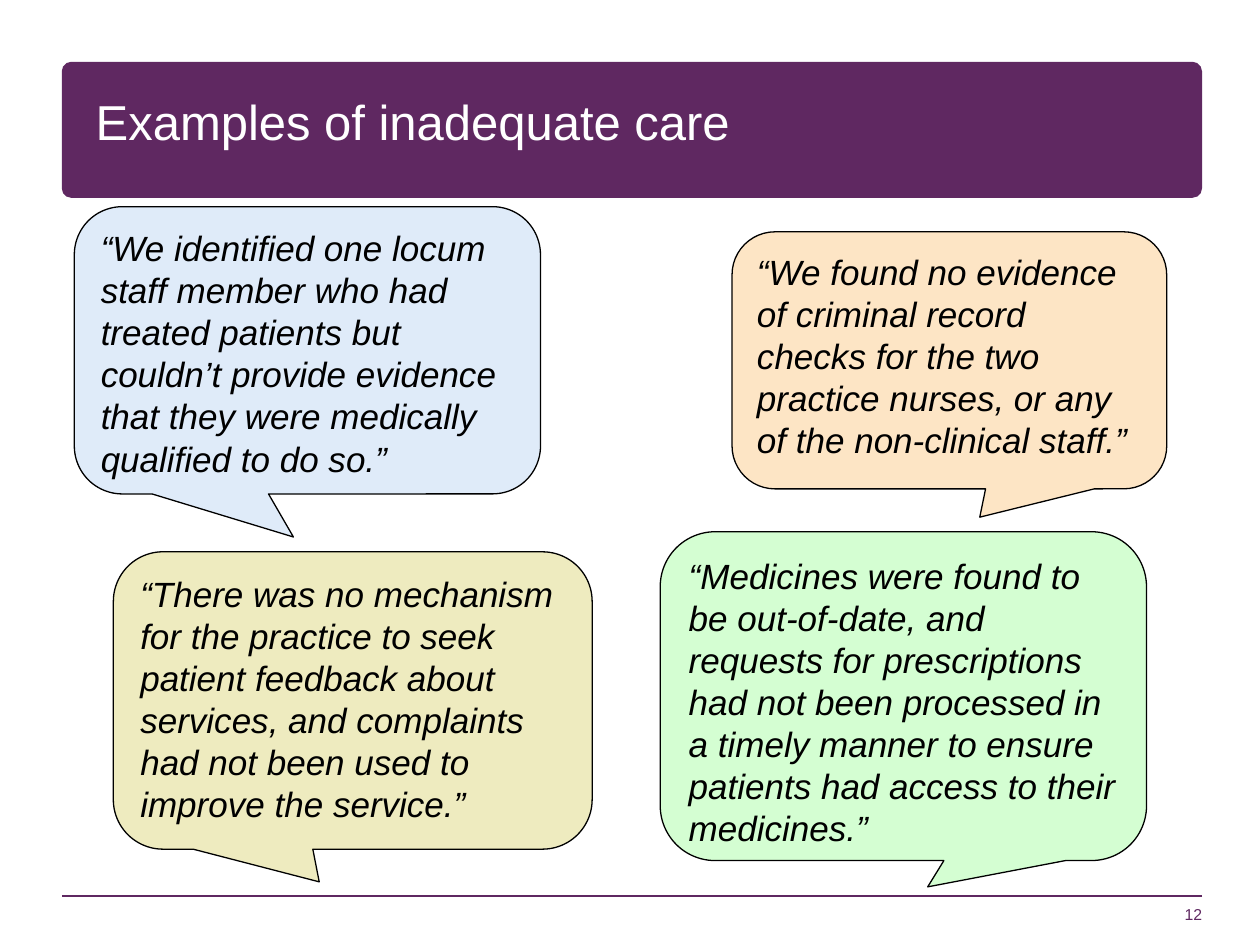
from lxml.etree import SubElement
from pptx import Presentation
from pptx.dml.color import RGBColor
from pptx.enum.shapes import MSO_CONNECTOR, MSO_SHAPE
from pptx.enum.text import MSO_ANCHOR, PP_ALIGN
from pptx.oxml.ns import qn
from pptx.util import Inches, Pt

COLORS = {
    "plum": "5F2861", "white": "FFFFFF", "black": "000000",
    "blue": "DFEBF9", "orange": "FDE5C5", "khaki": "EEEBBF", "green": "D4FED2",
}
FONT = "Arial"
LEFT, RIGHT = 0.49, 9.54  # content margins, inches

# Fill, box (left, top, width, height), tail tip offset as share of box, words
QUOTES = [
    ("khaki", (0.9, 4.38, 3.8, 2.36), (-0.07, 0.61),
     "“There was no mechanism for the practice to seek patient feedback about "
     "services, and complaints had not been used to improve the service.”"),
    ("green", (5.24, 4.22, 3.86, 2.61), (0.05, 0.58),
     "“Medicines were found to be out-of-date, and requests for prescriptions "
     "had not been processed in a timely manner to ensure patients had access "
     "to their medicines.”"),
    ("orange", (5.81, 1.84, 3.45, 2.04), (0.07, 0.61),
     "“We found no evidence of criminal record checks for the two practice "
     "nurses, or any of the non-clinical staff.”"),
    ("blue", (0.59, 1.64, 3.7, 2.28), (-0.03, 0.65),
     "“We identified one locum staff member who had treated patients but "
     "couldn’t provide evidence that they were medically qualified to do so.”"),
]


def rgb(name):
    return RGBColor.from_string(COLORS[name])


def write(sp, text, size, color, italic=False, align=PP_ALIGN.LEFT,
          anchor=MSO_ANCHOR.TOP, inset=None, spacing=None, after=0):
    tf = sp.text_frame
    tf.word_wrap = True
    tf.vertical_anchor = anchor
    if inset is not None:
        tf.margin_left = tf.margin_right = Inches(inset)
        tf.margin_top = tf.margin_bottom = Inches(inset)
    p = tf.paragraphs[0]
    p.alignment = align
    p.space_before, p.space_after = Pt(0), Pt(after)
    if spacing:
        p.line_spacing = spacing
    r = p.add_run()
    r.text = text
    r.font.name, r.font.size, r.font.italic = FONT, Pt(size), italic
    r.font.color.rgb = rgb(color)


def add_box(s, preset, box, fill, line=None):
    sp = s.shapes.add_shape(preset, *map(Inches, box))
    sp.shadow.inherit = False
    sp.fill.solid()
    sp.fill.fore_color.rgb = rgb(fill)
    if line:
        sp.line.color.rgb = rgb(line)
        sp.line.width = Pt(0.75)
    else:
        sp.line.fill.background()
    return sp


def add_header(s, box, text):
    left, top, width, height = box
    banner = add_box(s, MSO_SHAPE.ROUNDED_RECTANGLE, box, "plum")
    banner.adjustments[0] = 0.07
    title = s.shapes.title
    title.left, title.top = Inches(left + 0.27), Inches(top + 0.21)
    title.width, title.height = Inches(7.4), Inches(0.59)
    # Bring the title in front of the banner
    banner._element.addnext(title._element)
    write(title, text, 28, "white", anchor=MSO_ANCHOR.MIDDLE, inset=0, spacing=0.85)


def add_footer(s, rule_y, number):
    rule = s.shapes.add_connector(MSO_CONNECTOR.STRAIGHT, Inches(RIGHT),
                                  Inches(rule_y), Inches(LEFT), Inches(rule_y))
    rule.line.color.rgb = rgb("plum")
    rule.line.width = Pt(1)
    SubElement(rule._element.spPr, qn("a:effectLst"))
    width = 2.08
    sp = s.shapes.add_textbox(Inches(RIGHT - width), Inches(rule_y - 0.28),
                              Inches(width), Inches(0.5))
    write(sp, number, 9, "plum", align=PP_ALIGN.RIGHT,
          anchor=MSO_ANCHOR.BOTTOM, inset=0)


def add_quote(s, fill, box, tip, text):
    sp = add_box(s, MSO_SHAPE.ROUNDED_RECTANGULAR_CALLOUT, box, fill, "black")
    for i, value in enumerate((*tip, 0.167)):
        sp.adjustments[i] = value
    write(sp, text, 20, "black", italic=True, after=6)


def main():
    prs = Presentation()
    prs.slide_width, prs.slide_height = Inches(10), Inches(7.5)
    s = prs.slides.add_slide(prs.slide_layouts[5])
    # Title banner, footer, then speech bubbles from back to front
    add_header(s, (LEFT, 0.49, RIGHT - LEFT, 1.08), "Examples of inadequate care")
    add_footer(s, 7.11, "12")
    for quote in QUOTES:
        add_quote(s, *quote)
    prs.save("out.pptx")


if __name__ == "__main__":
    main()
